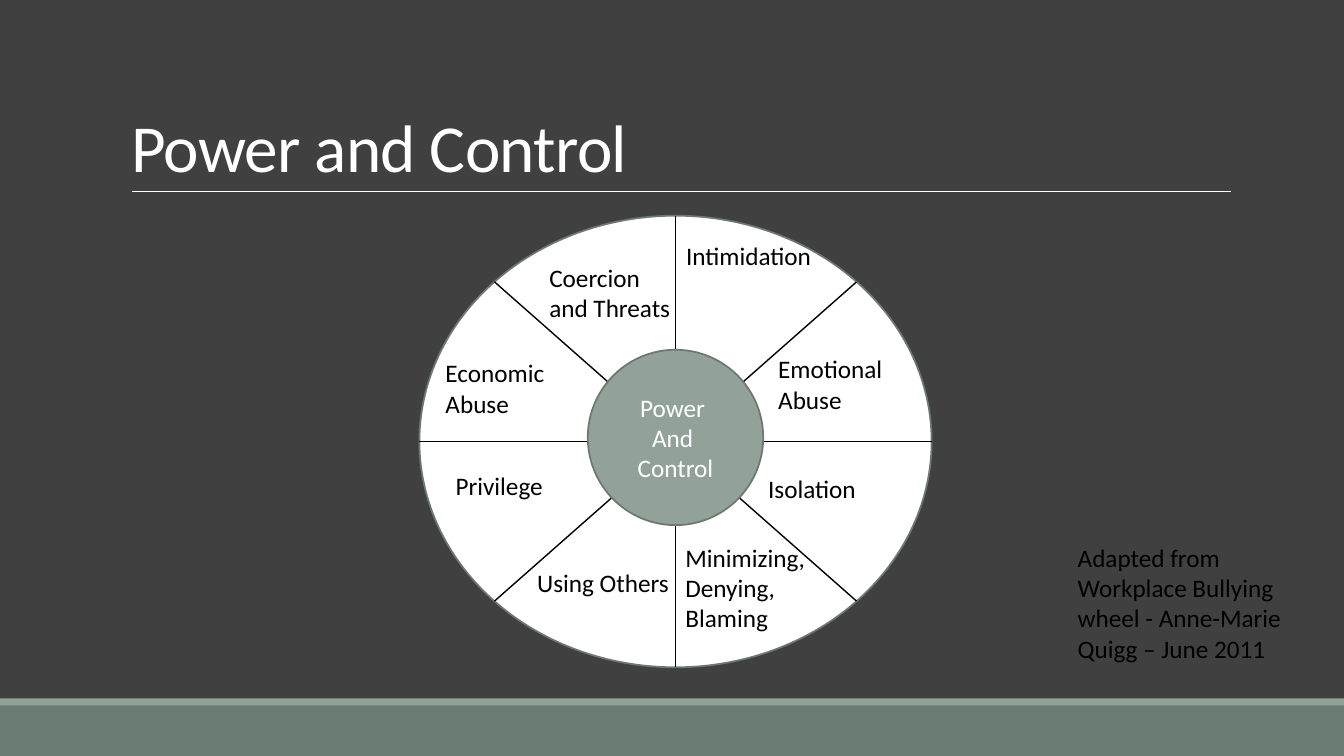
import math

from lxml import etree
from pptx import Presentation
from pptx import util as u
from pptx.dml.color import RGBColor
from pptx.enum import shapes, text
from pptx.oxml.ns import qn

CENTER_X, CENTER_Y = 6.7, 4.38
RADIUS_X, RADIUS_Y = 2.54, 2.24
HUB_RADIUS = 0.87

SEGMENTS = [
    (" Intimidation", 6.65, 2.33, 1.5, 0.71),
    ("Emotional Abuse", 7.62, 3.46, 1.77, 0.71),
    ("Isolation", 7.52, 4.65, 1.64, 0.4),
    ("Minimizing, Denying, Blaming", 6.7, 5.33, 1.64, 1.01),
    ("Using Others", 5.23, 5.58, 1.64, 0.4),
    ("Privilege", 4.42, 4.62, 1.64, 0.4),
    ("Economic Abuse", 4.32, 3.5, 1.64, 0.71),
    ("Coercion\nand Threats", 5.35, 2.55, 1.64, 0.71),
]
CREDIT = ("Adapted from Workplace Bullying wheel - Anne-Marie Quigg – June 2011",
          10.59, 5.33, 2.28, 1.31)


def color(hex_value):
    return RGBColor.from_string(hex_value)


def inches(*lengths):
    return [u.Inches(length) for length in lengths]


class WheelSlide:
    """Holds the style and the slide being built."""

    font_name = "Calibri"
    black, white = "000000", "FFFFFF"
    background, sage, green, rim = "404040", "93A299", "6B7D72", "6D7871"

    def __init__(self, deck):
        self.slide = deck.slides.add_slide(deck.slide_layouts[5])
        fill = self.slide.background.fill
        fill.solid()
        fill.fore_color.rgb = color(self.background)

    def fill_text(self, frame, words, ink, size=18, **paragraph_format):
        frame.word_wrap = True
        frame.text = words
        for paragraph in frame.paragraphs:
            for name, value in paragraph_format.items():
                setattr(paragraph, name, value)
            font = paragraph.runs[0].font
            for name, value in {"name": self.font_name, "size": u.Pt(size)}.items():
                setattr(font, name, value)
            font.color.rgb = color(ink)

    def title(self, words, left, top, width, height):
        heading = self.slide.shapes.title
        box = dict(zip(("left", "top", "width", "height"),
                       inches(left, top, width, height)))
        for name, value in box.items():
            setattr(heading, name, value)
        frame = heading.text_frame
        self.fill_text(frame, words, self.white, size=48,
                       alignment=text.PP_ALIGN.LEFT, line_spacing=0.85)
        frame.auto_size = text.MSO_AUTO_SIZE.NONE
        frame.vertical_anchor = text.MSO_ANCHOR.BOTTOM
        frame.paragraphs[0].runs[0].font._element.set("spc", "-50")

    def shape(self, kind, left, top, width, height, fill, outline=None):
        item = self.slide.shapes.add_shape(kind, *inches(left, top, width, height))
        item.shadow.inherit = False
        item.fill.solid()
        item.fill.fore_color.rgb = color(fill)
        if outline:
            item.line.color.rgb = color(outline)
            item.line.width = u.Pt(1.25)
        else:
            item.line.fill.background()
        return item

    def band(self, top, height, fill):
        self.shape(shapes.MSO_SHAPE.RECTANGLE, 0, top, 13.33, height, fill)

    def ellipse(self, center_y, radius_x, radius_y, fill):
        return self.shape(shapes.MSO_SHAPE.OVAL, CENTER_X - radius_x,
                          center_y - radius_y, 2 * radius_x, 2 * radius_y,
                          fill, self.rim)

    def line(self, x1, y1, x2, y2, ink, width):
        rule = self.slide.shapes.add_connector(
            shapes.MSO_CONNECTOR.STRAIGHT, *inches(x1, y1, x2, y2))
        rule.line.color.rgb = color(ink)
        rule.line.width = u.Pt(width)
        etree.SubElement(rule._element.spPr, qn("a:effectLst"))

    def spokes(self, count):
        """Draw full diameters at equal angles across the wheel."""
        for step in range(count):
            angle = math.pi * step / count
            dx, dy = RADIUS_X * math.cos(angle), RADIUS_Y * math.sin(angle)
            self.line(CENTER_X - dx, CENTER_Y - dy, CENTER_X + dx, CENTER_Y + dy,
                      self.black, 1)

    def label(self, words, left, top, width, height):
        box = self.slide.shapes.add_textbox(*inches(left, top, width, height))
        self.fill_text(box.text_frame, words, self.black)
        box.text_frame.auto_size = text.MSO_AUTO_SIZE.SHAPE_TO_FIT_TEXT

    def hub(self, words):
        core = self.ellipse(4.34, HUB_RADIUS, HUB_RADIUS, self.sage)
        self.fill_text(core.text_frame, words, self.white,
                       alignment=text.PP_ALIGN.CENTER)
        core.text_frame.vertical_anchor = text.MSO_ANCHOR.MIDDLE


def main():
    deck = Presentation()
    deck.slide_width, deck.slide_height = inches(13.33, 7.5)
    wheel = WheelSlide(deck)
    wheel.band(7, 0.5, wheel.green)
    wheel.band(6.93, 0.07, wheel.sage)
    wheel.line(1.31, 1.9, 12.21, 1.9, wheel.white, 0.5)
    wheel.title("Power and Control", 1.2, 0.31, 11, 1.59)
    wheel.ellipse(CENTER_Y, RADIUS_X, RADIUS_Y, wheel.white)
    wheel.spokes(4)
    for label in SEGMENTS + [CREDIT]:
        wheel.label(*label)
    wheel.hub("Power \nAnd \nControl")
    deck.save("out.pptx")


if __name__ == "__main__":
    main()
